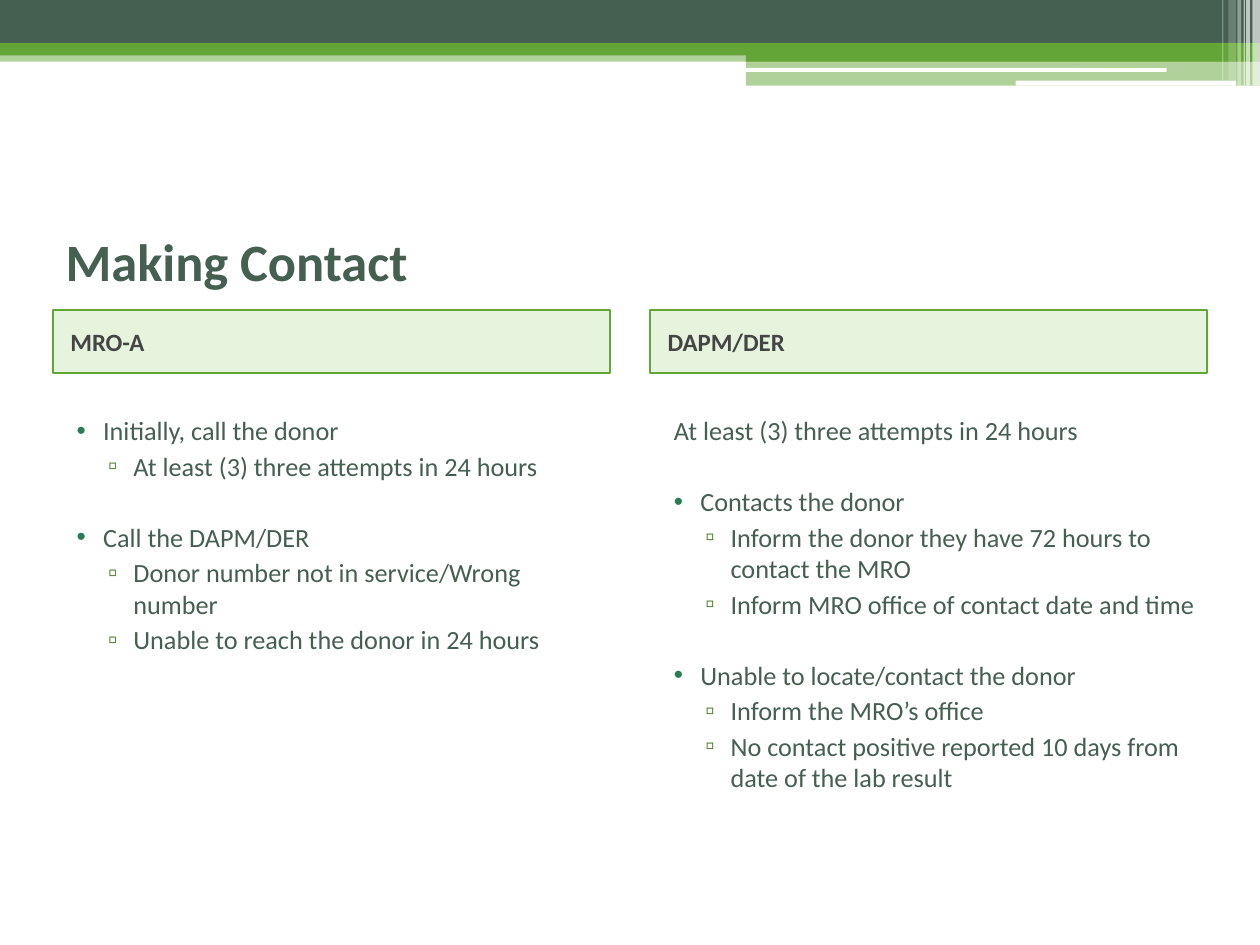
from lxml.etree import SubElement
from pptx import Presentation
from pptx.dml.color import RGBColor
from pptx.enum.shapes import MSO_SHAPE as Shape
from pptx.enum.text import MSO_ANCHOR as Anchor, PP_ALIGN as Align
from pptx.oxml.ns import qn
from pptx.util import Inches, Pt

COLORS = {
    "dark": "455F51", "green": "63A537", "white": "FFFFFF", "pale": "9FD47D",
    "heading": "454545", "bullet": "297D53", "subbullet": "4A7C29",
}
FONT = "Calibri"
TITLE = "Making Contact"
BANDS = [
    (0, 0.4, 10, 0.09, "green", 50, Shape.RECTANGLE),
    (0, 0, 10, 0.34, "dark", 100, Shape.RECTANGLE),
    (0, 0.34, 10, 0.1, "green", 100, Shape.RECTANGLE),
    (5.92, 0.39, 4.08, 0.1, "green", 100, Shape.RECTANGLE),
    (5.92, 0.48, 4.08, 0.2, "green", 50, Shape.RECTANGLE),
    (5.91, 0.54, 3.35, 0.03, "white", 100, Shape.ROUNDED_RECTANGLE),
    (8.06, 0.64, 1.75, 0.04, "white", 100, Shape.ROUNDED_RECTANGLE),
]
STRIPES = [
    (9.94, 0.06, 0.68, 65), (9.89, 0.03, 0.68, 65), (9.87, 0.01, 0.68, 60),
    (9.82, 0.03, 0.68, 40), (9.75, 0.06, 0.64, 20), (9.7, 0.01, 0.64, 30),
]
BULLETS = {
    "plain": (0, 0.09, 0, None, None),
    "point": (0, 0.3, -0.21, "•", "bullet"),
    "detail": (1, 0.54, -0.2, "▫", "subbullet"),
}
COLUMNS = [
    ("MRO-A", [
        [("point", "Initially, call the donor"),
         ("detail", "At least (3) three attempts in 24 hours")],
        [("point", "Call the DAPM/DER"),
         ("detail", "Donor number not in service/Wrong number"),
         ("detail", "Unable to reach the donor in 24 hours")],
    ]),
    ("DAPM/DER", [
        [("plain", "At least (3) three attempts in 24 hours")],
        [("point", "Contacts the donor"),
         ("detail", "Inform the donor they have 72 hours to contact the MRO"),
         ("detail", "Inform MRO office of contact date and time")],
        [("point", "Unable to locate/contact the donor"),
         ("detail", "Inform the MRO’s office"),
         ("detail", "No contact positive reported 10 days from date of the lab result")],
    ]),
]
MARGIN, COLUMN_WIDTH, COLUMN_STEP = 0.42, 4.42, 4.74
HEADING_TOP, HEADING_HEIGHT, BODY_HEIGHT = 2.46, 0.5, 4.25
LINE_GAP, GROUP_GAP = 2.2, 22.7


def rgb(name):
    return RGBColor.from_string(COLORS[name])


def add_block(page, left, top, width, height, color, opacity=100, kind=Shape.RECTANGLE):
    block = page.shapes.add_shape(kind, Inches(left), Inches(top), Inches(width), Inches(height))
    block.shadow.inherit = False
    block.fill.solid()
    block.fill.fore_color.rgb = rgb(color)
    block.line.fill.background()
    if opacity < 100:
        fill = block._element.spPr.find(qn("a:solidFill"))
        SubElement(fill[0], qn("a:alpha"), val=str(opacity * 1000))
    return block


def style(para, size, color, bold=False):
    para.alignment = Align.LEFT
    para.font.name = FONT
    para.font.size = Pt(size)
    para.font.bold = bold
    para.font.color.rgb = rgb(color)


def indent(para, left, first, symbol=None, color=None):
    props = para._p.get_or_add_pPr()
    props.set("marL", str(Inches(left)))
    props.set("indent", str(Inches(first)))
    if symbol:
        tint = SubElement(props, qn("a:buClr"))
        SubElement(tint, qn("a:srgbClr"), val=COLORS[color])
        SubElement(props, qn("a:buFont"), typeface="Arial")
        SubElement(props, qn("a:buChar"), char=symbol)


def add_heading(page, left, text):
    box = add_block(page, left, HEADING_TOP, COLUMN_WIDTH, HEADING_HEIGHT, "pale", 25)
    box.line.color.rgb = rgb("green")
    box.line.width = Pt(1)
    box.text_frame.vertical_anchor = Anchor.MIDDLE
    para = box.text_frame.paragraphs[0]
    para.text = text
    para.space_before = Pt(LINE_GAP)
    style(para, 14.2, "heading", True)
    indent(para, 0.04, 0)


def add_body(page, left, groups):
    box = page.shapes.add_textbox(Inches(left), Inches(HEADING_TOP + HEADING_HEIGHT),
                                  Inches(COLUMN_WIDTH), Inches(BODY_HEIGHT))
    frame = box.text_frame
    frame.word_wrap = True
    frame.margin_top = Inches(0.33)
    frame.margin_right = Inches(0.08)
    for group_index, group in enumerate(groups):
        for line_index, (kind, text) in enumerate(group):
            first = group_index == line_index == 0
            para = frame.paragraphs[0] if first else frame.add_paragraph()
            level, *bullet = BULLETS[kind]
            para.text = text
            para.level = level
            gap = LINE_GAP if line_index else GROUP_GAP
            para.space_before = Pt(0 if first else gap)
            style(para, 15, "dark")
            indent(para, *bullet)


def main():
    deck = Presentation()
    deck.slide_width, deck.slide_height = Inches(10), Inches(7.5)
    page = deck.slides.add_slide(deck.slide_layouts[5])

    for band in BANDS:
        add_block(page, *band)
    for left, width, height, opacity in STRIPES:
        add_block(page, left, 0, width, height, "white", opacity)

    title = page.shapes.title
    title.left, title.top = Inches(MARGIN), Inches(1.74)
    title.width, title.height = Inches(9.17), Inches(0.65)
    title.text_frame.text = TITLE
    title.text_frame.vertical_anchor = Anchor.MIDDLE
    style(title.text_frame.paragraphs[0], 30, "dark", True)

    for index, (heading, groups) in enumerate(COLUMNS):
        left = MARGIN + index * COLUMN_STEP
        add_heading(page, left, heading)
        add_body(page, left, groups)

    deck.save("out.pptx")


if __name__ == "__main__":
    main()
